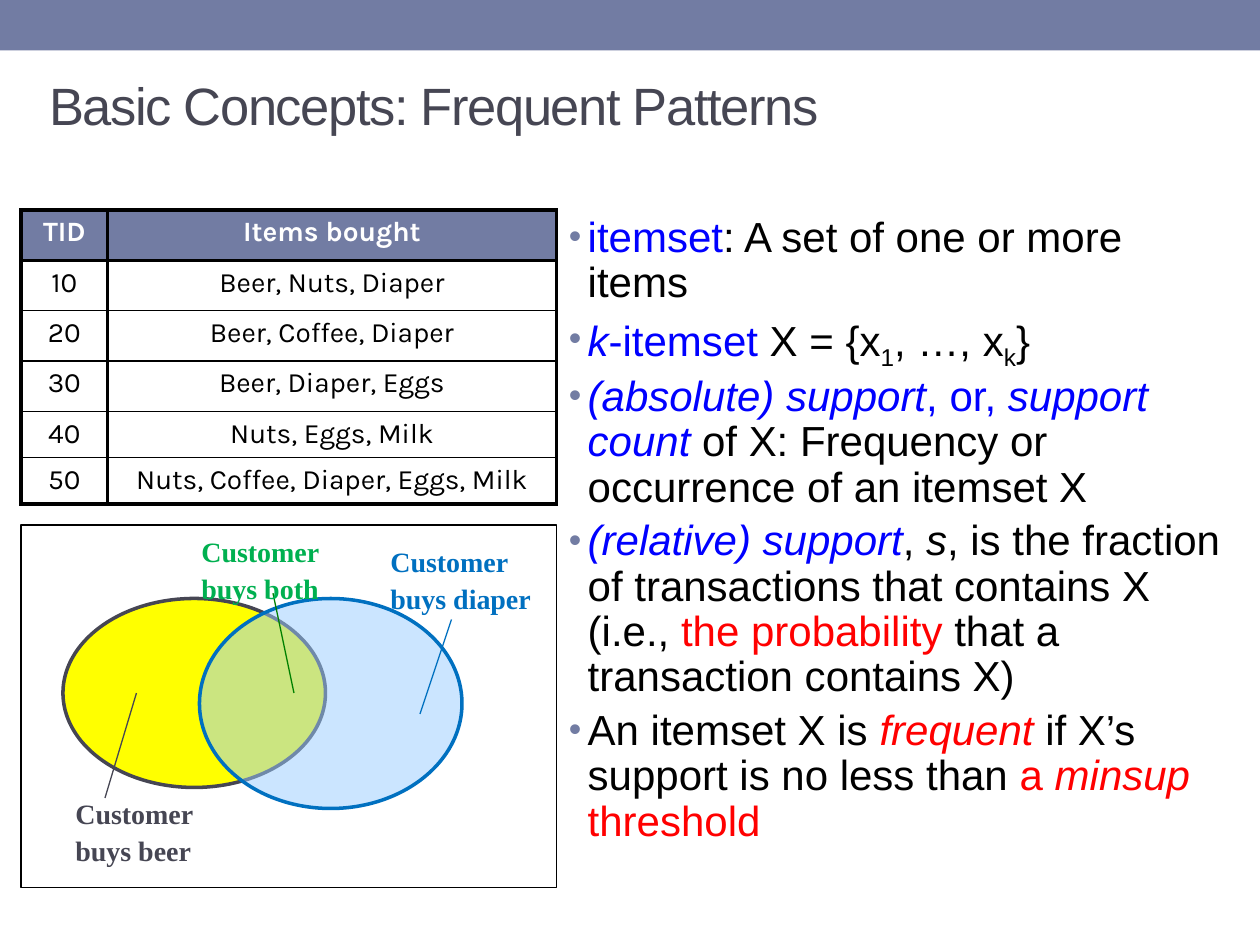
from lxml.etree import SubElement
from pptx import Presentation
from pptx.dml.color import RGBColor
from pptx.enum.shapes import MSO_CONNECTOR as Connector, MSO_SHAPE as Shape
from pptx.enum.text import MSO_ANCHOR as Anchor, PP_ALIGN as Align
from pptx.oxml.ns import qn
from pptx.util import Inches, Pt

SLATE, INK, BLACK, WHITE = "727CA3", "464653", "000000", "FFFFFF"
BLUE, RED, SKY = "0000FF", "FF0000", "0070C0"
TITLE = "Basic Concepts: Frequent Patterns"
TRANSACTIONS = [
    ("TID", "Items bought"),
    ("10", "Beer, Nuts, Diaper"),
    ("20", "Beer, Coffee, Diaper"),
    ("30", "Beer, Diaper, Eggs"),
    ("40", "Nuts, Eggs, Milk"),
    ("50", "Nuts, Coffee, Diaper, Eggs, Milk"),
]
DEFINITIONS = [
    [("itemset", BLUE, ""), (": A set of one or more items", BLACK, "")],
    [("k", BLUE, "italic"), ("-itemset", BLUE, ""), (" X = {x", BLACK, ""), ("1", BLACK, "sub"),
     (", …, x", BLACK, ""), ("k", BLACK, "sub"), ("}", BLACK, "")],
    [("(absolute) support", BLUE, "italic"), (", or, ", BLUE, ""), ("support count ", BLUE, "italic"),
     ("of X: Frequency or occurrence of an itemset X", BLACK, "")],
    [("(relative) support", BLUE, "italic"), (", ", BLACK, ""), ("s", BLACK, "italic"),
     (", is the fraction of transactions that contains X (i.e., ", BLACK, ""),
     ("the probability ", RED, ""), ("that a transaction contains X)", BLACK, "")],
    [("An itemset X is ", BLACK, ""), ("frequent ", RED, "italic"),
     ("if X’s support is no less than ", BLACK, ""), ("a ", RED, ""),
     ("minsup", RED, "italic"), (" threshold", RED, "")],
]
# Lengths below are in grid units of a twelfth of an inch.
COLUMNS, ROWS = (8.25, 42.75), (4.8, 4.8, 4.8, 4.8, 4.4, 4.4)
CIRCLES = [((6, 57, 25, 18), "FFFF00", INK, 100), ((19, 57, 25, 20), "99CCFF", SKY, 50)]
POINTERS = [((13, 66), (10, 76), INK), ((40, 68), (43, 59), SKY), ((28, 66), (26, 56.5), "008000")]
LABELS = [
    ((36, 51, 16, 8.25), ("Customer", "buys diaper"), SKY),
    ((18, 50, 13.8, 8.25), ("Customer", "buys both"), "00B050"),
    ((6, 75, 13.8, 8.25), ("Customer", "buys beer"), INK),
]


def grid(*units):
    """Turn grid units into slide lengths."""
    return [Inches(unit / 12) for unit in units]


def color(value):
    """Turn a hex string into a colour."""
    return RGBColor.from_string(value)


def add_run(paragraph, text, size, face, hue, bold=False, style=""):
    """Add one formatted run and return it."""
    run = paragraph.add_run()
    run.text = text
    font = run.font
    font.size, font.name, font.bold = Pt(size), face, bold
    font.italic = style == "italic"
    font.color.rgb = color(hue)
    if style == "sub":
        run._r.get_or_add_rPr().set("baseline", "-25000")
    return run


def add_figure(slide, kind, box, fill, line, width=2, opacity=100):
    """Add a preset shape with optional fill and outline."""
    figure = slide.shapes.add_shape(kind, *grid(*box))
    figure.shadow.inherit = False
    if fill:
        figure.fill.solid()
        figure.fill.fore_color.rgb = color(fill)
        if opacity < 100:
            tint = figure._element.spPr.find(f"{qn('a:solidFill')}/{qn('a:srgbClr')}")
            SubElement(tint, qn("a:alpha"), val=str(opacity * 1000))
    else:
        figure.fill.background()
    if line:
        figure.line.color.rgb, figure.line.width = color(line), Pt(width)
    else:
        figure.line.fill.background()


def add_title(slide):
    """Place and format the title."""
    title = slide.shapes.title
    title.left, title.top, title.width, title.height = grid(3.5, 5, 105, 10)
    title.text_frame.vertical_anchor = Anchor.MIDDLE
    paragraph = title.text_frame.paragraphs[0]
    paragraph.alignment = Align.LEFT
    add_run(paragraph, TITLE, 30, "Arial", INK)._r.get_or_add_rPr().set("spc", "-80")


def add_paragraphs(slide, box, count):
    """Add a wrapping text box and return its paragraphs."""
    frame = slide.shapes.add_textbox(*grid(*box)).text_frame
    frame.word_wrap = True
    for _ in range(count - 1):
        frame.add_paragraph()
    return frame.paragraphs


def add_definitions(slide):
    """Add the bulleted definitions."""
    paragraphs = add_paragraphs(slide, (53, 20, 65, 65), len(DEFINITIONS))
    for paragraph, runs in zip(paragraphs, DEFINITIONS):
        paragraph.line_spacing, paragraph.space_before = 0.9, Pt(4.8)
        props = paragraph._p.get_or_add_pPr()
        props.set("marL", str(Inches(0.15)))
        props.set("indent", str(-Inches(0.15)))
        SubElement(SubElement(props, qn("a:buClr")), qn("a:srgbClr"), val=SLATE)
        SubElement(props, qn("a:buSzPct"), val="85000")
        SubElement(props, qn("a:buFont"), typeface="Arial")
        SubElement(props, qn("a:buChar"), char="•")
        for text, hue, style in runs:
            add_run(paragraph, text, 24, "Arial", hue, style=style)


def add_borders(cell, row):
    """Draw thick outer and header borders and thin row rules."""
    top = 2.25 if row < 2 else 1
    bottom = 2.25 if row in (0, len(ROWS) - 1) else 1
    props = cell._tc.get_or_add_tcPr()
    for side, width in zip("LRTB", (2.25, 2.25, top, bottom)):
        border = SubElement(props, qn(f"a:ln{side}"), w=str(Pt(width)))
        SubElement(SubElement(border, qn("a:solidFill")), qn("a:srgbClr"), val=BLACK)


def add_transactions(slide):
    """Add the transaction table."""
    box = grid(2, 20, sum(COLUMNS), sum(ROWS))
    table = slide.shapes.add_table(len(ROWS), len(COLUMNS), *box).table
    for column, width in zip(table.columns, grid(*COLUMNS)):
        column.width = width
    for row, height in zip(table.rows, grid(*ROWS)):
        row.height = height
    for r, record in enumerate(TRANSACTIONS):
        for c, text in enumerate(record):
            cell, header = table.cell(r, c), r == 0
            add_borders(cell, r)
            if header:
                cell.fill.solid()
                cell.fill.fore_color.rgb = color(SLATE)
            else:
                cell.fill.background()
            paragraph = cell.text_frame.paragraphs[0]
            paragraph.alignment, paragraph.space_before = Align.CENTER, Pt(3.2)
            add_run(paragraph, text, 16, "Karla", WHITE if header else BLACK, header)


def add_venn(slide):
    """Add the Venn diagram with its pointers, labels and frame."""
    for box, fill, line, opacity in CIRCLES:
        add_figure(slide, Shape.OVAL, box, fill, line, opacity=opacity)
    for start, end, hue in POINTERS:
        pointer = slide.shapes.add_connector(Connector.STRAIGHT, *grid(*start, *end))
        pointer.line.color.rgb, pointer.line.width = color(hue), Pt(0.75)
        SubElement(pointer._element.spPr, qn("a:effectLst"))
    for box, lines, hue in LABELS:
        for paragraph, text in zip(add_paragraphs(slide, box, len(lines)), lines):
            paragraph.line_spacing = 1.1
            add_run(paragraph, text, 16, "Times New Roman", hue, True)
    add_figure(slide, Shape.RECTANGLE, (2, 50, 51, 34.5), None, BLACK, 0.75)


def main():
    """Build and save the slide."""
    deck = Presentation()
    deck.slide_width, deck.slide_height = Inches(10), Inches(7.5)
    slide = deck.slides.add_slide(deck.slide_layouts[5])
    add_figure(slide, Shape.RECTANGLE, (0, 0, 120, 4.8), SLATE, None)
    add_title(slide)
    add_definitions(slide)
    add_venn(slide)
    add_transactions(slide)
    deck.save("out.pptx")


if __name__ == "__main__":
    main()
